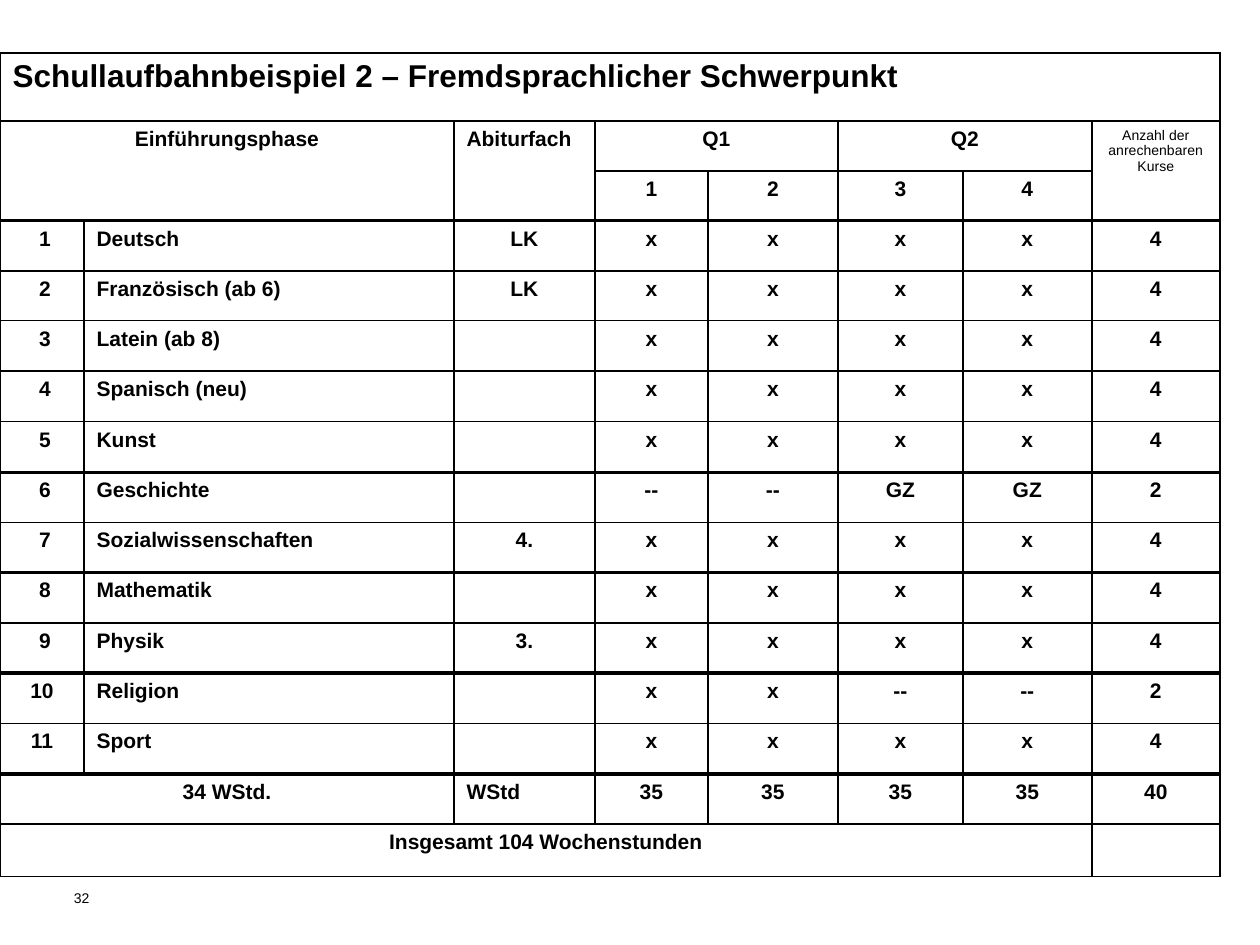
from lxml import etree
from pptx import Presentation
from pptx import util as u
from pptx.dml.color import RGBColor
from pptx.enum import text
from pptx.oxml import ns

PX = 914400 / 126
BLACK = RGBColor(0, 0, 0)
FONT = {"name": "Arial", "bold": True, "size": u.Pt(12)}
BIG = {**FONT, "size": u.Pt(18)}
SMALL = {**FONT, "bold": False, "size": u.Pt(8)}
PLAIN = "{2D5ABB26-0587-4C30-8999-92F81FD0307C}"

COLS = [84, 370, 141, 113, 130, 125, 129, 128]
ROWS = [68] + [50] * 14 + [53]
THICK = {2: 2, 7: 2, 9: 2, 11: 2.25, 13: 2.25}
SPANS = [(0, 0, 0, 7), (1, 0, 2, 1), (1, 2, 2, 2), (1, 3, 1, 4),
         (1, 5, 1, 6), (1, 7, 2, 7), (14, 0, 14, 1), (15, 0, 15, 6)]
TITLE = "Schullaufbahnbeispiel 2 – Fremdsprachlicher Schwerpunkt"
COUNT = "Anzahl der anrechenbaren Kurse"
LEFT = {TITLE, "Abiturfach", "WStd"}
STYLES = {TITLE: BIG, COUNT: SMALL}
FULL = ["x"] * 4
TERMS = [
    ("Deutsch", "LK", FULL, 4),
    ("Französisch (ab 6)", "LK", FULL, 4),
    ("Latein (ab 8)", "", FULL, 4),
    ("Spanisch (neu)", "", FULL, 4),
    ("Kunst", "", FULL, 4),
    ("Geschichte", "", ["--", "--", "GZ", "GZ"], 2),
    ("Sozialwissenschaften", "4.", FULL, 4),
    ("Mathematik", "", FULL, 4),
    ("Physik", "3.", FULL, 4),
    ("Religion", "", ["x", "x", "--", "--"], 2),
    ("Sport", "", FULL, 4),
]
GRID = [
    [TITLE],
    ["Einführungsphase", "", "Abiturfach", "Q1", "", "Q2", "", COUNT],
    ["", "", "", "1", "2", "3", "4"],
    *([f"{num:>2}", name, exam, *marks, str(sum_)]
      for num, (name, exam, marks, sum_) in enumerate(TERMS, 1)),
    ["34 WStd.", "", "WStd", *["35"] * 4, "40"],
    ["Insgesamt 104 Wochenstunden"],
]


def px(num):
    """Turn pixels into EMU."""
    return u.Emu(round(num * PX))


def write(para, words, style, align):
    """Put one styled run into a paragraph."""
    para.alignment = align
    run = para.add_run()
    run.text = words
    run.font.color.rgb = BLACK
    for key, val in style.items():
        setattr(run.font, key, val)


def edge(cell, side, width):
    """Draw one border of a cell."""
    line = etree.SubElement(cell._tc.get_or_add_tcPr(), ns.qn(f"a:ln{side}"),
                            w=str(u.Pt(width)))
    fill = etree.SubElement(line, ns.qn("a:solidFill"))
    etree.SubElement(fill, ns.qn("a:srgbClr"), val=str(BLACK))


def plan(slide, left, top, width, height):
    """Build the course table in the given box."""
    table = slide.shapes.add_table(len(ROWS), len(COLS), px(left), px(top),
                                   px(width), px(height)).table
    table.first_row = table.horz_banding = False
    table._tbl.tblPr.find(ns.qn("a:tableStyleId")).text = PLAIN
    for col, size in zip(table.columns, COLS):
        col.width = px(size * width / sum(COLS))
    for row, size in zip(table.rows, ROWS):
        row.height = px(size * height / sum(ROWS))
    for r1, c1, r2, c2 in SPANS:
        table.cell(r1, c1).merge(table.cell(r2, c2))
    for r in range(len(ROWS)):
        for c in range(len(COLS)):
            cell = table.cell(r, c)
            if cell.is_spanned:
                continue
            last = r + cell.span_height - 1 if cell.is_merge_origin else r
            for side, width in zip("LRTB", (1, 1, THICK.get(r - 1, 1),
                                            THICK.get(last, 1))):
                edge(cell, side, width)
            cell.fill.background()
            words = GRID[r][c] if c < len(GRID[r]) else ""
            if words:
                align = (text.PP_ALIGN.LEFT if c == 1 or words in LEFT
                         else text.PP_ALIGN.CENTER)
                write(cell.text_frame.paragraphs[0], words,
                      STYLES.get(words, FONT), align)


def page(slide, left, top, width, height):
    """Place the page number in the given box."""
    frame = slide.shapes.add_textbox(px(left), px(top), px(width),
                                     px(height)).text_frame
    form = {"word_wrap": True, "margin_left": 0, "margin_right": 0,
            "margin_top": 0, "margin_bottom": 0}
    for key, val in form.items():
        setattr(frame, key, val)
    write(frame.paragraphs[0], "32", SMALL, text.PP_ALIGN.LEFT)


def main():
    """Build and save the slide."""
    deck = Presentation()
    deck.slide_width, deck.slide_height = px(1260), px(945)
    slide = deck.slides.add_slide(deck.slide_layouts[6])
    page(slide, 74, 890, 40, 47)
    plan(slide, 0, 53, 1220, 821)
    deck.save("out.pptx")


if __name__ == "__main__":
    main()
